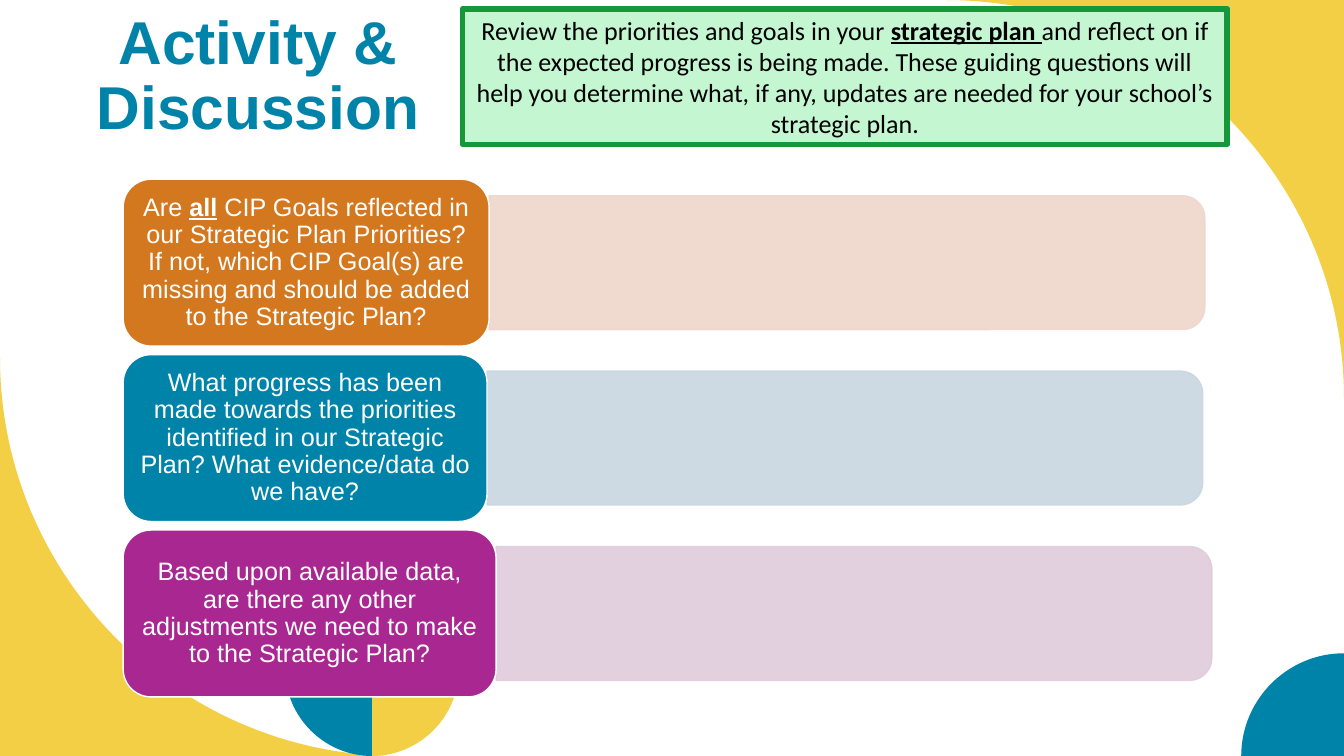
from lxml.etree import SubElement
from pptx import Presentation
from pptx.dml.color import RGBColor
from pptx.enum.shapes import MSO_SHAPE
from pptx.enum.text import MSO_ANCHOR, PP_ALIGN
from pptx.oxml.ns import qn
from pptx.util import Pt

WIDTH, HEIGHT = 960, 540
YELLOW, BLUE, WHITE = "F3CF45", "0083A9", "FFFFFF"
EMPHASIS = {"bold": True, "underline": True}
UNITS = 100  # outline units per point
KAPPA = 0.55  # handle length of a quarter circle

CARD_LEFT, CARD_TOP, CARD_HEIGHT, CARD_PITCH = 88, 128, 119.2, 125.3
BAR_LENGTH, BAR_HEIGHT = 511.2, 95.6

# card width, card colour, bar colour, text runs
CARDS = [
    (261.4, "D4781F", "EFD6CB", [
        ("Are ", {}),
        ("all", EMPHASIS),
        (" CIP Goals reflected in our Strategic Plan Priorities? If not, which "
         "CIP Goal(s) are missing and should be added to the Strategic Plan?", {}),
    ]),
    (259.9, BLUE, "C9D7E1", [
        ("What progress has been made towards the priorities identified in our "
         "Strategic Plan? What evidence/data do we have?", {}),
    ]),
    (266.4, "A92791", "E1CBDB", [
        ("Based upon available data, are there any other adjustments we need to "
         "make to the Strategic Plan?", {}),
    ]),
]

INSTRUCTIONS = [
    ("Review the priorities and goals in your ", {}),
    ("strategic plan ", EMPHASIS),
    ("and reflect on if the expected progress is being made. These guiding "
     "questions will help you determine what, if any, updates are needed for "
     "your school’s strategic plan.", {}),
]


def rgb(color):
    return RGBColor.from_string(color)


def set_opacity(fill_parent, percent):
    """Set the opacity of the solid fill directly under an spPr or a:ln."""
    color = fill_parent.find(qn("a:solidFill"))[0]
    SubElement(color, qn("a:alpha"), val=str(percent * 1000))


def style(sp, fill, line=None, weight=1):
    sp.shadow.inherit = False
    sp.fill.solid()
    sp.fill.fore_color.rgb = rgb(fill)
    if line:
        sp.line.color.rgb = rgb(line)
        sp.line.width = Pt(weight)
    else:
        sp.line.fill.background()


def add_box(s, kind, left, top, width, height):
    return s.shapes.add_shape(kind, Pt(left), Pt(top), Pt(width), Pt(height))


def add_text(sp, runs, font, size, color, margins=(7.2, 3.6), spacing=1.0, **formats):
    tf = sp.text_frame
    tf.word_wrap = True
    tf.vertical_anchor = MSO_ANCHOR.MIDDLE
    tf.margin_left = tf.margin_right = Pt(margins[0])
    tf.margin_top = tf.margin_bottom = Pt(margins[1])
    p = tf.paragraphs[0]
    p.alignment = PP_ALIGN.CENTER
    p.line_spacing = spacing
    for text, extra in runs:
        r = p.add_run()
        r.text = text
        r.font.color.rgb = rgb(color)
        values = {"name": font, "size": Pt(size), **formats, **extra}
        for name, value in values.items():
            setattr(r.font, name, value)


def toward(point, corner):
    return [a + KAPPA * (b - a) for a, b in zip(point, corner)]


def add_outline(s, points, corners, fill):
    """Draw a closed outline; corners maps a segment's number to the corner
    of the box that its quarter circle bulges towards."""
    scaled = [(x * UNITS, y * UNITS) for x, y in points]
    builder = s.shapes.build_freeform(*scaled[0], scale=Pt(1) / UNITS)
    builder.add_line_segments(scaled[1:], close=True)
    sp = builder.convert_to_shape()
    style(sp, fill)
    left, top = (min(values) for values in zip(*points))
    segments = list(sp.element.iter(qn("a:lnTo")))
    for number, corner in corners.items():
        start, end = points[number], points[number + 1]
        segment = segments[number]
        segment.tag = qn("a:cubicBezTo")
        handles = [toward(start, corner), toward(end, corner)]
        for i, (x, y) in enumerate(handles):
            pt = SubElement(segment, qn("a:pt"), x=str(round((x - left) * UNITS)),
                            y=str(round((y - top) * UNITS)))
            segment.insert(i, pt)


def add_petal(s, side, fill):
    """Draw half of the bottom flower; side is 1 for right and -1 for left."""
    middle, inner_top, outer_top, inner_bottom = 265.7, 440, 478, 502
    edge = middle + side * 62
    points = [(edge, inner_top), (edge, outer_top), (middle, HEIGHT),
              (middle, inner_bottom), (edge, inner_top)]
    add_outline(s, points, {1: (edge, HEIGHT), 3: (middle, inner_top)}, fill)


def add_corner(s, x, y, radius, fill, filled=False):
    """Draw a quarter disc (filled) or the area outside one at a slide corner."""
    far_x = x + (radius if x == 0 else -radius)
    far_y = y + (radius if y == 0 else -radius)
    bulge = (far_x, far_y) if filled else (x, y)
    add_outline(s, [(x, y), (x, far_y), (far_x, y)], {1: bulge}, fill)


def add_background(s):
    add_corner(s, WIDTH, 0, 284.4, YELLOW)
    add_corner(s, 0, HEIGHT, 284.4, YELLOW)
    add_corner(s, WIDTH, HEIGHT, 73.4, BLUE, filled=True)
    add_petal(s, 1, YELLOW)
    add_petal(s, -1, BLUE)


def add_bar(s, left, middle, color):
    """Draw a bar, rounded on the right, as an upright shape turned by 90 degrees."""
    center = left + BAR_LENGTH / 2
    sp = add_box(s, MSO_SHAPE.ROUND_2_SAME_RECTANGLE, center - BAR_HEIGHT / 2,
                 middle - BAR_LENGTH / 2, BAR_HEIGHT, BAR_LENGTH)
    sp.rotation = 90
    sp.adjustments[0] = 0.167
    style(sp, color, color)
    properties = sp.element.spPr
    set_opacity(properties, 90)
    set_opacity(properties.find(qn("a:ln")), 90)


def add_card(s, top, width, color, bar_color, runs):
    add_bar(s, CARD_LEFT + width, top + CARD_HEIGHT / 2, bar_color)
    sp = add_box(s, MSO_SHAPE.ROUNDED_RECTANGLE, CARD_LEFT, top, width, CARD_HEIGHT)
    sp.adjustments[0] = 0.167
    style(sp, color, WHITE)
    add_text(sp, runs, "Arial", 18, WHITE, margins=(5, 2.7), spacing=0.9)


def main():
    prs = Presentation()
    prs.slide_width, prs.slide_height = Pt(WIDTH), Pt(HEIGHT)
    s = prs.slides.add_slide(prs.slide_layouts[6])
    add_background(s)

    instructions = add_box(s, MSO_SHAPE.RECTANGLE, 330.4, 6.3, 546.2, 96.9)
    style(instructions, "C3F6D1", "159839", 4)
    add_text(instructions, INSTRUCTIONS, "Calibri", 18.6, "000000")

    title = s.shapes.add_textbox(Pt(41.8), Pt(7), Pt(285), Pt(97))
    add_text(title, [("Activity & Discussion", {})], "Arial", 43.2, BLUE,
             spacing=0.9, bold=True)

    for i, card in enumerate(CARDS):
        add_card(s, CARD_TOP + i * CARD_PITCH, *card)
    prs.save("out.pptx")


if __name__ == "__main__":
    main()
